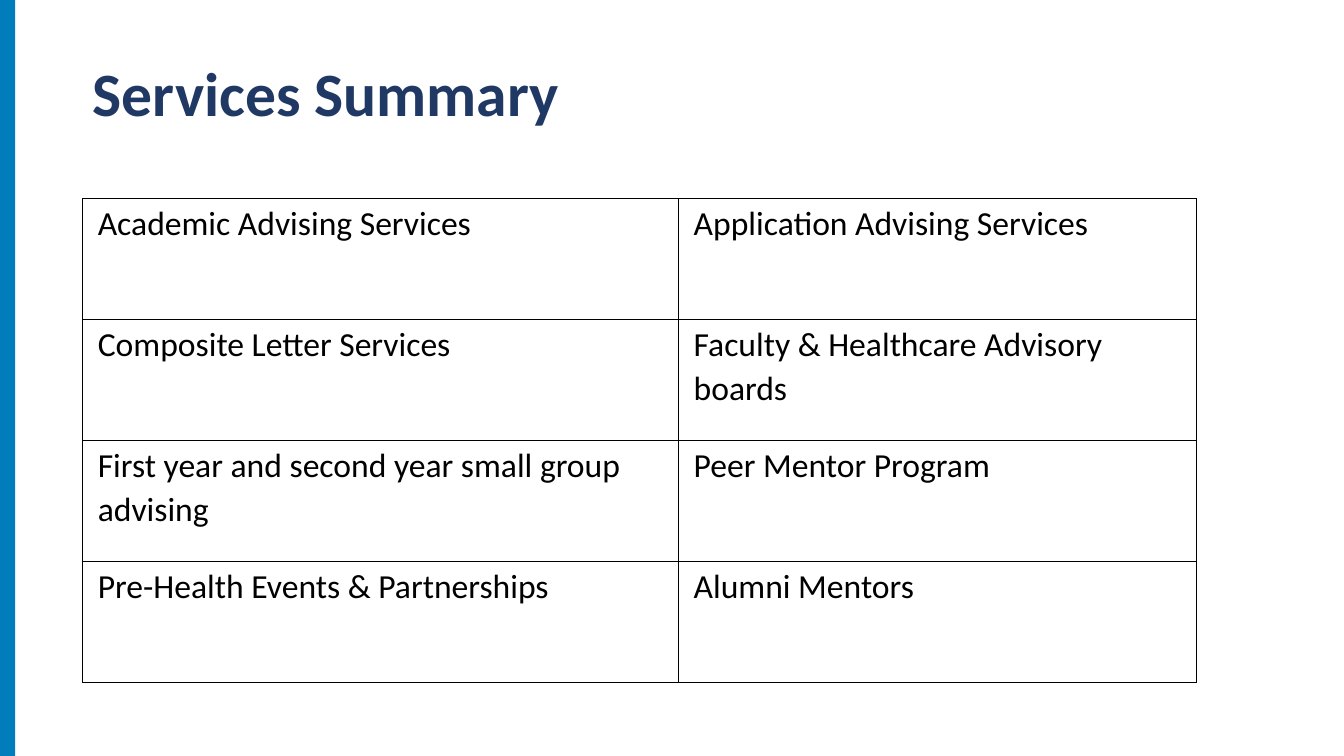
import pptx
import pptx.dml.color
import pptx.enum.shapes
import pptx.enum.text
import pptx.util
from lxml import etree
from pptx.oxml.ns import qn

Inches = pptx.util.Inches
Pt = pptx.util.Pt


def color(code):
    return pptx.dml.color.RGBColor.from_string(code)


class Deck:
    font = "Calibri"
    blue = "007DBA"
    navy = "203864"
    black = "000000"
    white = "FFFFFF"

    def __init__(self):
        self.file = pptx.Presentation()
        self.file.slide_width = Inches(13.33)
        self.file.slide_height = Inches(7.5)
        self.slide = self.file.slides.add_slide(self.file.slide_layouts[6])

    def style(self, para, size, code, space, bold=False):
        para.line_spacing = space
        para.font.name = self.font
        para.font.size = Pt(size)
        para.font.bold = bold
        para.font.color.rgb = color(code)

    def bar(self, x, y, w, h):
        rect = pptx.enum.shapes.MSO_SHAPE.RECTANGLE
        bar = self.slide.shapes.add_shape(
            rect, Inches(x), Inches(y), Inches(w), Inches(h))
        bar.shadow.inherit = False
        bar.fill.solid()
        bar.fill.fore_color.rgb = color(self.blue)
        bar.line.fill.background()

    def title(self, text, x, y, w, h):
        box = self.slide.shapes.add_textbox(
            Inches(x), Inches(y), Inches(w), Inches(h))
        frame = box.text_frame
        frame.word_wrap = True
        frame.vertical_anchor = pptx.enum.text.MSO_ANCHOR.MIDDLE
        frame.text = text
        self.style(frame.paragraphs[0], 44, self.navy, 0.9, bold=True)

    def border(self, cell):
        props = cell._tc.get_or_add_tcPr()
        for spot, side in enumerate(("lnL", "lnR", "lnT", "lnB")):
            line = etree.Element(qn("a:" + side), w=str(Pt(1)))
            fill = etree.SubElement(line, qn("a:solidFill"))
            etree.SubElement(fill, qn("a:srgbClr"), val=self.black)
            props.insert(spot, line)

    def table(self, rows, x, y, widths, height):
        grid = self.slide.shapes.add_table(
            len(rows), len(widths), Inches(x), Inches(y),
            Inches(sum(widths)), Inches(height * len(rows))).table
        grid.first_row = False
        grid.horz_banding = False
        for col, width in zip(grid.columns, widths):
            col.width = Inches(width)
        for row, texts in zip(grid.rows, rows):
            row.height = Inches(height)
            for cell, text in zip(row.cells, texts):
                cell.text = text
                cell.margin_left = cell.margin_right = Inches(0.15)
                cell.margin_top = Inches(0.02)
                cell.margin_bottom = 0
                cell.fill.solid()
                cell.fill.fore_color.rgb = color(self.white)
                self.border(cell)
                self.style(cell.text_frame.paragraphs[0], 24, self.black, 1.07)


def main():
    deck = Deck()

    # Side bar and heading
    deck.bar(0, 0, 0.15, 7.5)
    deck.title("Services Summary", 0.82, 0.3, 10.51, 1.32)

    # Services
    rows = [
        ("Academic Advising Services", "Application Advising Services"),
        ("Composite Letter Services", "Faculty & Healthcare Advisory boards"),
        ("First year and second year small group advising",
         "Peer Mentor Program"),
        ("Pre-Health Events & Partnerships", "Alumni Mentors"),
    ]
    deck.table(rows, 0.82, 1.97, (5.91, 5.14), 1.2)

    deck.file.save("out.pptx")


if __name__ == "__main__":
    main()
